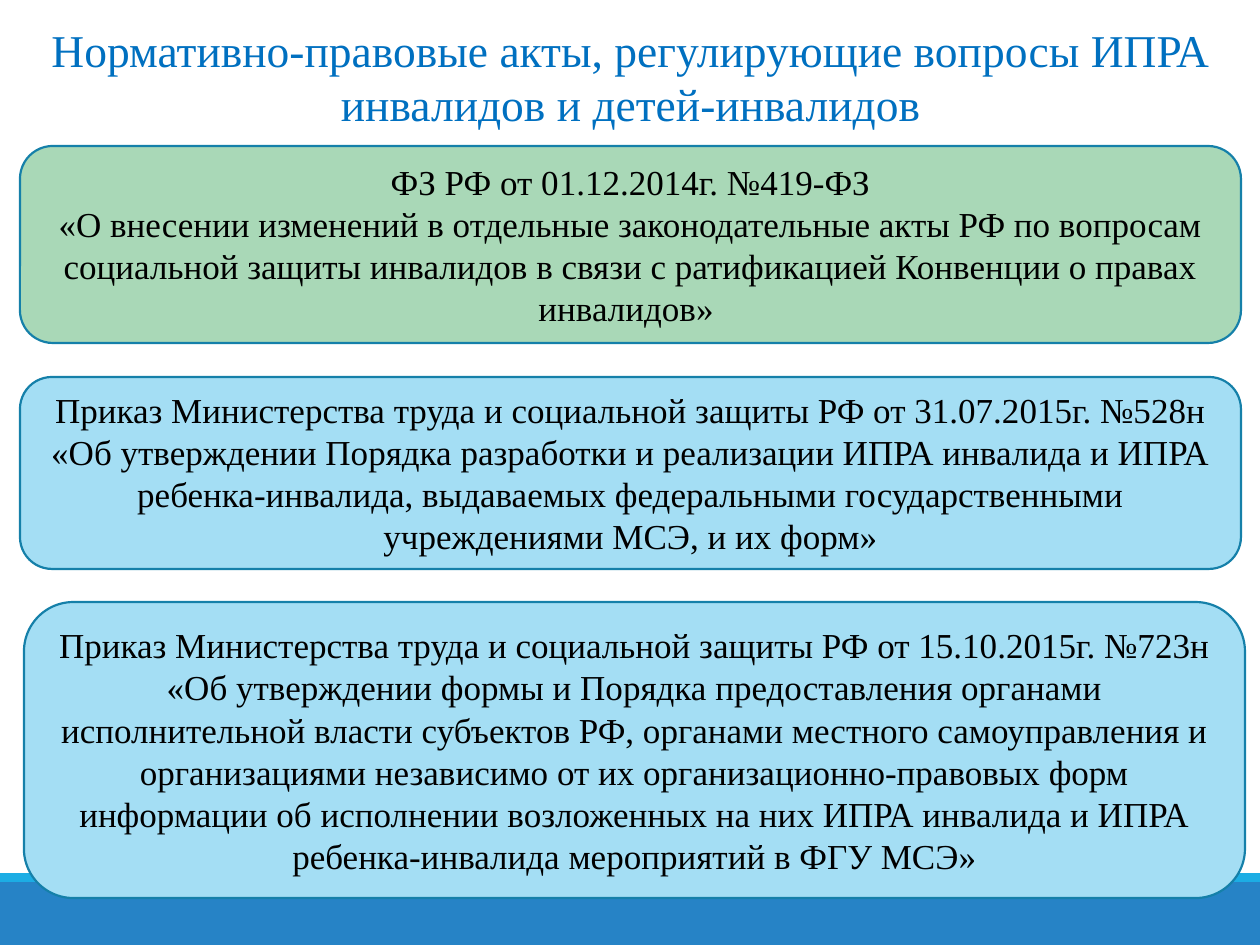
from dataclasses import dataclass

from pptx import Presentation
from pptx.dml.color import RGBColor
from pptx.enum.shapes import MSO_SHAPE
from pptx.enum.text import MSO_ANCHOR, PP_ALIGN
from pptx.util import Pt

RECT = MSO_SHAPE.RECTANGLE
ROUNDED = MSO_SHAPE.FLOWCHART_ALTERNATE_PROCESS
MIDDLE = MSO_ANCHOR.MIDDLE
CENTER = PP_ALIGN.CENTER

PX = 914400 / 126  # EMU per pixel
SLIDE_W, SLIDE_H = 1260, 945


@dataclass(frozen=True)
class Theme:
    font: str = "Times New Roman"
    title_size: int = 26
    body_size: int = 20
    leading: float = 1.2
    outline_width: float = 1.25
    title: str = "0070C0"
    body: str = "000000"
    law: str = "A9D8B7"
    order: str = "A4DEF4"
    outline: str = "1580A9"
    band: str = "2683C6"
    stripe: str = "1CADE4"


def emu(*lengths):
    return [round(n * PX) for n in lengths]


class SlideBuilder:
    def __init__(self, prs, theme):
        self.theme = theme
        self.s = prs.slides.add_slide(prs.slide_layouts[6])

    def add_text(self, tf, paragraphs, size, color):
        """Each paragraph is a list of lines parted by line breaks."""
        tf.word_wrap = True
        tf.vertical_anchor = MIDDLE
        for i, lines in enumerate(paragraphs):
            p = tf.add_paragraph() if i else tf.paragraphs[0]
            p.alignment = CENTER
            p.line_spacing = Pt(size * self.theme.leading)
            for j, line in enumerate(lines):
                if j:
                    p.add_line_break()
                r = p.add_run()
                r.text = line
                r.font.name = self.theme.font
                r.font.size = Pt(size)
                r.font.color.rgb = RGBColor.from_string(color)

    def shape(self, kind, box, fill):
        sp = self.s.shapes.add_shape(kind, *emu(*box))
        sp.shadow.inherit = False
        sp.fill.solid()
        sp.fill.fore_color.rgb = RGBColor.from_string(fill)
        return sp

    def band(self, top, height, fill):
        sp = self.shape(RECT, (0, top, SLIDE_W, height), fill)
        sp.line.fill.background()

    def title(self, box, text):
        sp = self.s.shapes.add_textbox(*emu(*box))
        self.add_text(sp.text_frame, [[text]], self.theme.title_size, self.theme.title)

    def card(self, box, fill, paragraphs):
        sp = self.shape(ROUNDED, box, fill)
        sp.line.color.rgb = RGBColor.from_string(self.theme.outline)
        sp.line.width = Pt(self.theme.outline_width)
        self.add_text(sp.text_frame, paragraphs, self.theme.body_size, self.theme.body)


def main():
    prs = Presentation()
    prs.slide_width, prs.slide_height = emu(SLIDE_W, SLIDE_H)
    theme = Theme()
    slide = SlideBuilder(prs, theme)

    # Footer bands
    slide.band(882, 63, theme.band)
    slide.band(873, 9, theme.stripe)

    # Title
    slide.title((0, 26, 1262, 101),
                "Нормативно-правовые акты, регулирующие вопросы ИПРА "
                "инвалидов и детей-инвалидов")

    # Ministry orders
    ministry = "Приказ Министерства труда и социальной защиты РФ от "
    orders = [
        ((20, 377, 1221, 192), "31.07.2015г. №528н",
         "«Об утверждении Порядка разработки и реализации ИПРА инвалида и ИПРА "
         "ребенка-инвалида, выдаваемых федеральными государственными "
         "учреждениями МСЭ, и их форм»"),
        ((24, 602, 1221, 296), "15.10.2015г. №723н",
         "«Об утверждении формы и Порядка предоставления органами "
         "исполнительной власти субъектов РФ, органами местного самоуправления и "
         "организациями независимо от их организационно-правовых форм "
         "информации об исполнении возложенных на них ИПРА инвалида и ИПРА "
         "ребенка-инвалида мероприятий в ФГУ МСЭ»"),
    ]
    for box, number, subject in orders:
        slide.card(box, theme.order, [[ministry + number, subject]])

    # Federal law
    slide.card((20, 146, 1221, 197), theme.law, [
        ["ФЗ РФ от 01.12.2014г. №419-ФЗ"],
        ["«О внесении изменений в отдельные законодательные акты РФ по вопросам "
         "социальной защиты инвалидов в связи с ратификацией Конвенции о правах "
         "инвалидов» "],
    ])

    prs.save("out.pptx")


if __name__ == "__main__":
    main()
